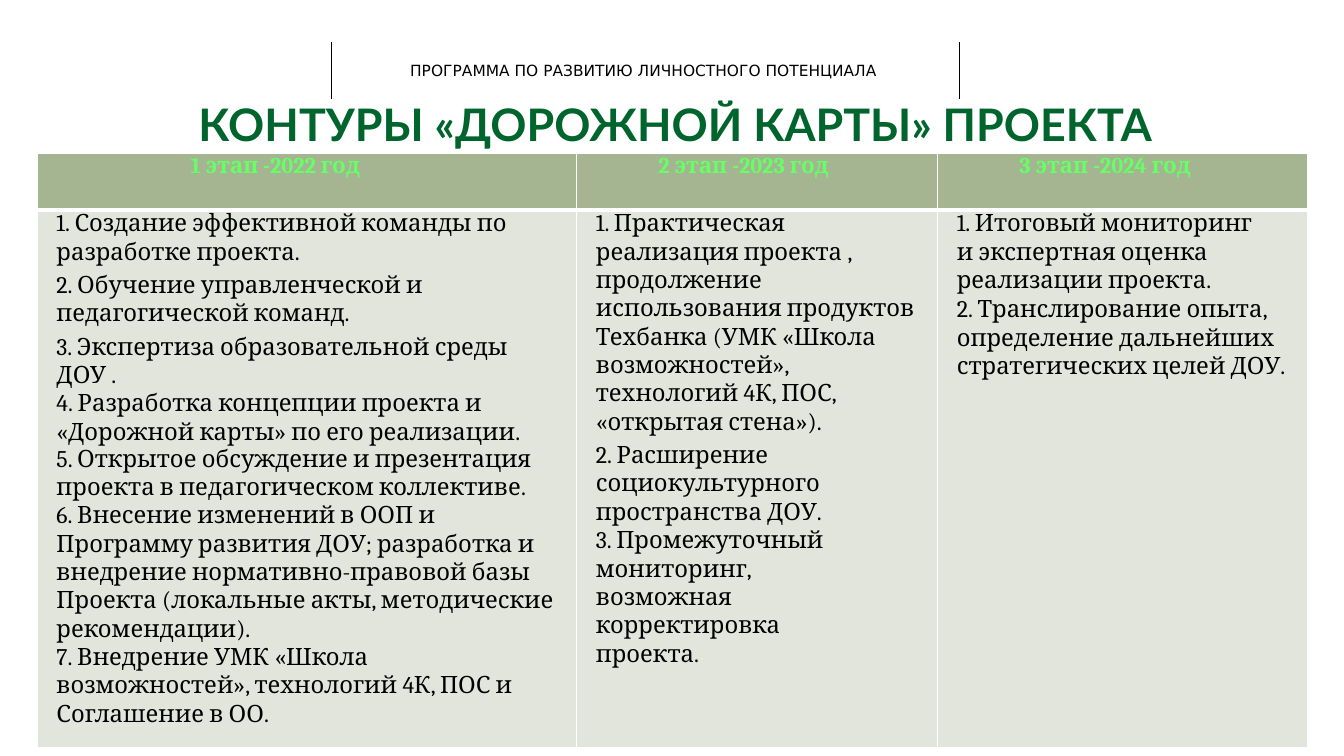
from dataclasses import dataclass

from lxml.etree import SubElement
from pptx import Presentation
from pptx.dml.color import RGBColor
from pptx.enum.shapes import MSO_CONNECTOR
from pptx.enum.text import MSO_ANCHOR, PP_ALIGN
from pptx.oxml import parse_xml
from pptx.oxml.ns import nsdecls, qn
from pptx.util import Inches, Pt


@dataclass(frozen=True)
class Theme:
    black: str = "000000"
    border: str = "FFFFFF"
    title: str = "00642D"
    stage: str = "66FF66"
    stage_fill: str = "A5B592"
    body_fill: str = "E1E5DC"
    program_font: str = "DejaVu Sans"
    title_font: str = "Lato"
    table_font: str = "Cambria"
    program_size: float = 11
    title_size: float = 32
    stage_size: float = 16
    body_size: float = 17


@dataclass(frozen=True)
class Item:
    text: str
    before: float = 0
    right: float = 0.22
    spacing: float = 1.03


@dataclass(frozen=True)
class Stage:
    name: str
    width: float
    indent: float
    items: tuple


STAGES = (
    Stage("1 этап -2022 год", 5.35, 1.52, (
        Item("1. Создание эффективной команды по разработке проекта."),
        Item("2. Обучение управленческой и педагогической команд.", 3.5),
        Item("3. Экспертиза образовательной среды ДОУ .", 3.5),
        Item("4. Разработка концепции проекта и «Дорожной карты» по его реализации.", 0.1),
        Item("5. Открытое обсуждение и презентация проекта в педагогическом коллективе.",
             0.1, spacing=1.0),
        Item("6. Внесение изменений в ООП и Программу развития ДОУ; разработка и внедрение "
             "нормативно-правовой базы Проекта (локальные акты, методические рекомендации)."),
        Item("7. Внедрение УМК «Школа возможностей», технологий 4К, ПОС и Соглашение в ОО."),
    )),
    Stage("2 этап -2023 год", 3.58, 0.81, (
        Item("1. Практическая реализация проекта , продолжение использования продуктов "
             "Техбанка (УМК «Школа возможностей», технологий 4К, ПОС, «открытая стена»)."),
        Item("2. Расширение социокультурного пространства ДОУ.", 3.5),
        Item("3. Промежуточный мониторинг, возможная корректировка проекта.", 0.2, 0.8),
    )),
    Stage("3 этап -2024 год", 3.67, 0.81, (
        Item("1. Итоговый мониторинг и экспертная оценка реализации проекта.", right=0.4),
        Item("2. Транслирование опыта, определение дальнейших стратегических целей ДОУ.",
             0.6, 0),
    )),
)


class RoadmapSlide:
    def __init__(self, page, theme):
        self.page = page
        self.theme = theme

    def style(self, paragraph, font, size, color, bold=False):
        paragraph.font.name = font
        paragraph.font.size = Pt(size)
        paragraph.font.bold = bold
        paragraph.font.color.rgb = RGBColor.from_string(color)

    def title(self, text, left, top, width, height):
        box = self.page.shapes.title
        box.left, box.top = Inches(left), Inches(top)
        box.width, box.height = Inches(width), Inches(height)
        frame = box.text_frame
        frame.margin_left = frame.margin_right = frame.margin_top = frame.margin_bottom = 0
        frame.vertical_anchor = MSO_ANCHOR.TOP
        frame.word_wrap = True
        paragraph = frame.paragraphs[0]
        paragraph.text = text
        paragraph.alignment = PP_ALIGN.CENTER
        paragraph.line_spacing = 0.9
        paragraph.space_before = Pt(0)
        self.style(paragraph, self.theme.title_font, self.theme.title_size,
                   self.theme.title, True)

    def label(self, text, left, top, width, height):
        box = self.page.shapes.add_textbox(
            Inches(left), Inches(top), Inches(width), Inches(height))
        box.text_frame.word_wrap = True
        paragraph = box.text_frame.paragraphs[0]
        paragraph.text = text
        self.style(paragraph, self.theme.program_font, self.theme.program_size,
                   self.theme.black)

    def vertical_line(self, x, top, bottom):
        line = self.page.shapes.add_connector(
            MSO_CONNECTOR.STRAIGHT, Inches(x), Inches(top), Inches(x), Inches(bottom))
        line.line.color.rgb = RGBColor.from_string(self.theme.black)
        line.line.width = Pt(0.75)
        SubElement(line._element.spPr, qn("a:effectLst"))

    def indent(self, paragraph, left, right=0):
        properties = paragraph._p.get_or_add_pPr()
        properties.set("marL", str(Inches(left)))
        properties.set("marR", str(Inches(right)))
        properties.set("indent", "0")

    def format_cell(self, cell, fill, top, bottom):
        cell.margin_left = cell.margin_right = cell.margin_top = cell.margin_bottom = 0
        cell.fill.solid()
        cell.fill.fore_color.rgb = RGBColor.from_string(fill)
        properties = cell._tc.get_or_add_tcPr()
        widths = {"lnL": 1, "lnR": 1, "lnT": top, "lnB": bottom}
        for position, (side, width) in enumerate(widths.items()):
            properties.insert(position, parse_xml(
                f'<a:{side} {nsdecls("a")} w="{Pt(width)}"><a:solidFill>'
                f'<a:srgbClr val="{self.theme.border}"/></a:solidFill></a:{side}>'))

    def stage_table(self, stages, left, top, heights):
        theme = self.theme
        width = sum(stage.width for stage in stages)
        table = self.page.shapes.add_table(
            len(heights), len(stages), Inches(left), Inches(top),
            Inches(width), Inches(sum(heights))).table
        table.horz_banding = False
        for row, height in zip(table.rows, heights):
            row.height = Inches(height)
        for index, stage in enumerate(stages):
            table.columns[index].width = Inches(stage.width)
            heading, body = table.cell(0, index), table.cell(1, index)
            self.format_cell(heading, theme.stage_fill, 1, 3)
            self.format_cell(body, theme.body_fill, 3, 1)
            paragraph = heading.text_frame.paragraphs[0]
            paragraph.text = stage.name
            self.indent(paragraph, stage.indent)
            self.style(paragraph, theme.table_font, theme.stage_size, theme.stage, True)
            body.text = "\n".join(item.text for item in stage.items)
            for paragraph, item in zip(body.text_frame.paragraphs, stage.items):
                self.indent(paragraph, 0.19, item.right)
                paragraph.line_spacing = item.spacing
                paragraph.space_before = Pt(item.before)
                self.style(paragraph, theme.table_font, theme.body_size, theme.black)


def main():
    deck = Presentation()
    deck.slide_width, deck.slide_height = Inches(13.33), Inches(7.5)
    page = deck.slides.add_slide(deck.slide_layouts[5])
    slide = RoadmapSlide(page, Theme())
    for x in (3.29, 9.52):
        slide.vertical_line(x, 0.42, 0.98)
    slide.label("ПРОГРАММА ПО РАЗВИТИЮ ЛИЧНОСТНОГО ПОТЕНЦИАЛА", 3.97, 0.56, 4.87, 0.29)
    slide.title("КОНТУРЫ «ДОРОЖНОЙ КАРТЫ» ПРОЕКТА", 0.42, 1.02, 12.56, 0.48)
    slide.stage_table(STAGES, 0.37, 1.52, (0.56, 5.33))
    deck.save("out.pptx")


if __name__ == "__main__":
    main()
